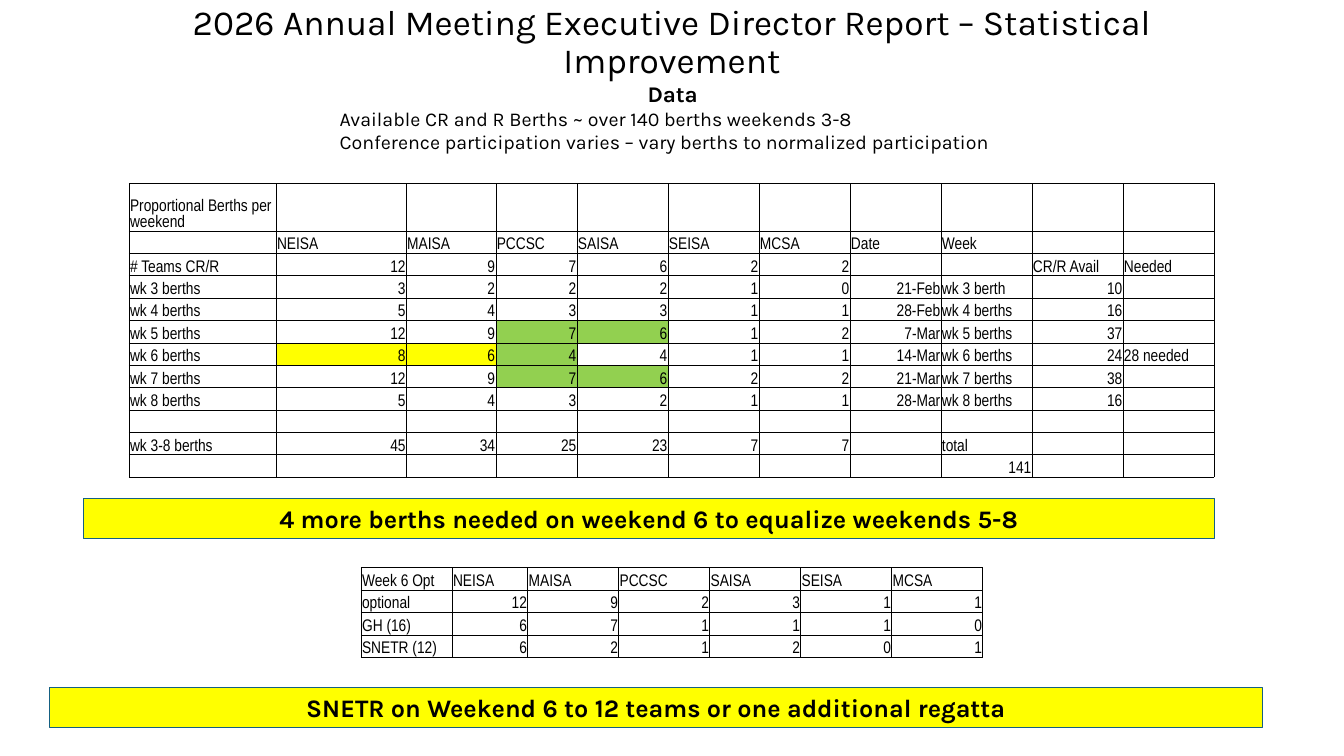
import pptx
import pptx.util
import pptx.dml.color
import pptx.enum.shapes
import pptx.enum.text
import pptx.oxml
import pptx.oxml.ns
import lxml.etree

Pt = pptx.util.Pt
ALIGN = pptx.enum.text.PP_ALIGN
ANCHOR = pptx.enum.text.MSO_ANCHOR
COLORS = {
    "ink": "000000",
    "gold": "FFFF00",
    "green": "92D050",
    "edge": "156082",
}


def paint(name):
    return pptx.dml.color.RGBColor.from_string(COLORS[name])


def write(para, text, size=12, font="Karla", bold=False, align=ALIGN.LEFT, space=None):
    """Fill one paragraph; an empty one only keeps its text size."""
    para.alignment = align
    if space:
        para.line_spacing = space
    if not text:
        tag = pptx.oxml.ns.qn("a:endParaRPr")
        lxml.etree.SubElement(para._p, tag, sz=str(size * 100))
        return
    run = para.add_run()
    run.text = text
    run.font.size = Pt(size)
    run.font.name = font
    run.font.bold = bold
    run.font.color.rgb = paint("ink")


class Deck:
    head = "Karla"
    body = "Arial Narrow"
    row = 16

    def __init__(self, wide, high):
        self.show = pptx.Presentation()
        self.show.slide_width, self.show.slide_height = Pt(wide), Pt(high)
        self.slide = self.show.slides.add_slide(self.show.slide_layouts[5])

    def title(self, text, box):
        shape = self.slide.shapes.title
        shape.left, shape.top, shape.width, shape.height = map(Pt, box)
        frame = shape.text_frame
        frame.word_wrap = True
        frame.auto_size = pptx.enum.text.MSO_AUTO_SIZE.NONE
        frame.vertical_anchor = ANCHOR.MIDDLE
        frame.margin_top, frame.margin_bottom = 0, Pt(23)
        write(frame.paragraphs[0], text, size=25.2, font=self.head,
              align=ALIGN.CENTER, space=0.9)

    def notes(self, head, lines, box):
        frame = self.slide.shapes.add_textbox(*map(Pt, box)).text_frame
        frame.word_wrap = True
        write(frame.paragraphs[0], head, size=16, font=self.head,
              bold=True, align=ALIGN.CENTER)
        for line in lines:
            write(frame.add_paragraph(), line, size=14, font=self.head)

    def banner(self, text, box):
        kind = pptx.enum.shapes.MSO_SHAPE.RECTANGLE
        shape = self.slide.shapes.add_shape(kind, *map(Pt, box))
        shape.shadow.inherit = False
        shape.fill.solid()
        shape.fill.fore_color.rgb = paint("gold")
        shape.line.color.rgb = paint("edge")
        shape.line.width = Pt(0.75)
        frame = shape.text_frame
        frame.word_wrap = True
        frame.vertical_anchor = ANCHOR.TOP
        write(frame.paragraphs[0], text, size=18, font=self.head,
              bold=True, align=ALIGN.CENTER)

    def grid(self, rows, left, top, cols, first=row, fills=None):
        fills = fills or {}
        highs = [first] + [self.row] * (len(rows) - 1)
        table = self.slide.shapes.add_table(
            len(rows), len(cols), Pt(left), Pt(top),
            Pt(sum(cols)), Pt(sum(highs))).table
        table.first_row = table.horz_banding = False
        for col, wide in zip(table.columns, cols):
            col.width = Pt(wide)
        for r, (line, high) in enumerate(zip(rows, highs)):
            table.rows[r].height = Pt(high)
            words = line.split("|")
            words += [""] * (len(cols) - len(words))
            for c, word in enumerate(words):
                self.cell(table.cell(r, c), word, fills.get((r, c)))

    def cell(self, cell, word, fill):
        cell.margin_left = cell.margin_right = cell.margin_top = Pt(0.6)
        cell.margin_bottom = 0
        cell.vertical_anchor = ANCHOR.BOTTOM
        # Counts and dates sit right, labels left
        count = word[:1].isdigit() and " " not in word
        write(cell.text_frame.paragraphs[0], word, font=self.body,
              align=ALIGN.RIGHT if count else ALIGN.LEFT)
        # Borders come before the fill in the cell's XML
        props = cell._tc.get_or_add_tcPr()
        for side in ("lnL", "lnR", "lnT", "lnB"):
            props.append(pptx.oxml.parse_xml(
                f'<a:{side} {pptx.oxml.ns.nsdecls("a")} w="{Pt(0.5)}"><a:solidFill>'
                f'<a:srgbClr val="{COLORS["ink"]}"/></a:solidFill></a:{side}>'))
        if fill:
            cell.fill.solid()
            cell.fill.fore_color.rgb = paint(fill)
        else:
            cell.fill.background()


def main():
    deck = Deck(960, 540)

    # Heading
    deck.title("2026 Annual Meeting Executive Director Report – Statistical Improvement",
               (66, 17, 828, 50))
    deck.notes("Data", [
        "Available CR and R Berths ~ over 140 berths weekends 3-8",
        "Conference participation varies – vary berths to normalized participation",
    ], (235.5, 53.5, 490, 80))

    # Key messages
    deck.banner("4 more berths needed on weekend 6 to equalize weekends 5-8",
                (59.5, 356, 808, 29))
    deck.banner("SNETR on Weekend 6 to 12 teams or one additional regatta",
                (35.5, 491, 866, 29))

    # Berths per weekend
    teams = "NEISA|MAISA|PCCSC|SAISA|SEISA|MCSA"
    weeks = [
        "Proportional Berths per weekend",
        f"|{teams}|Date|Week",
        "# Teams CR/R|12|9|7|6|2|2|||CR/R Avail|Needed",
        "wk 3 berths|3|2|2|2|1|0|21-Feb|wk 3 berth|10",
        "wk 4 berths|5|4|3|3|1|1|28-Feb|wk 4 berths|16",
        "wk 5 berths|12|9|7|6|1|2|7-Mar|wk 5 berths|37",
        "wk 6 berths|8|6|4|4|1|1|14-Mar|wk 6 berths|24|28 needed",
        "wk 7 berths|12|9|7|6|2|2|21-Mar|wk 7 berths|38",
        "wk 8 berths|5|4|3|2|1|1|28-Mar|wk 8 berths|16",
        "",
        "wk 3-8 berths|45|34|25|23|7|7||total",
        "||||||||141",
    ]
    fills = dict.fromkeys([(5, 3), (5, 4), (6, 3), (7, 3), (7, 4)], "green")
    fills.update({(6, 1): "gold", (6, 2): "gold"})
    deck.grid(weeks, 92.3, 131, [105, 93, 64, 58] + [65] * 7, first=34, fills=fills)

    # Options for week 6
    picks = [
        f"Week 6 Opt|{teams}",
        "optional|12|9|2|3|1|1",
        "GH (16)|6|7|1|1|1|0",
        "SNETR (12)|6|2|1|2|0|1",
    ]
    deck.grid(picks, 258, 405.5, [65, 54] + [65] * 5)

    deck.show.save("out.pptx")


if __name__ == "__main__":
    main()
